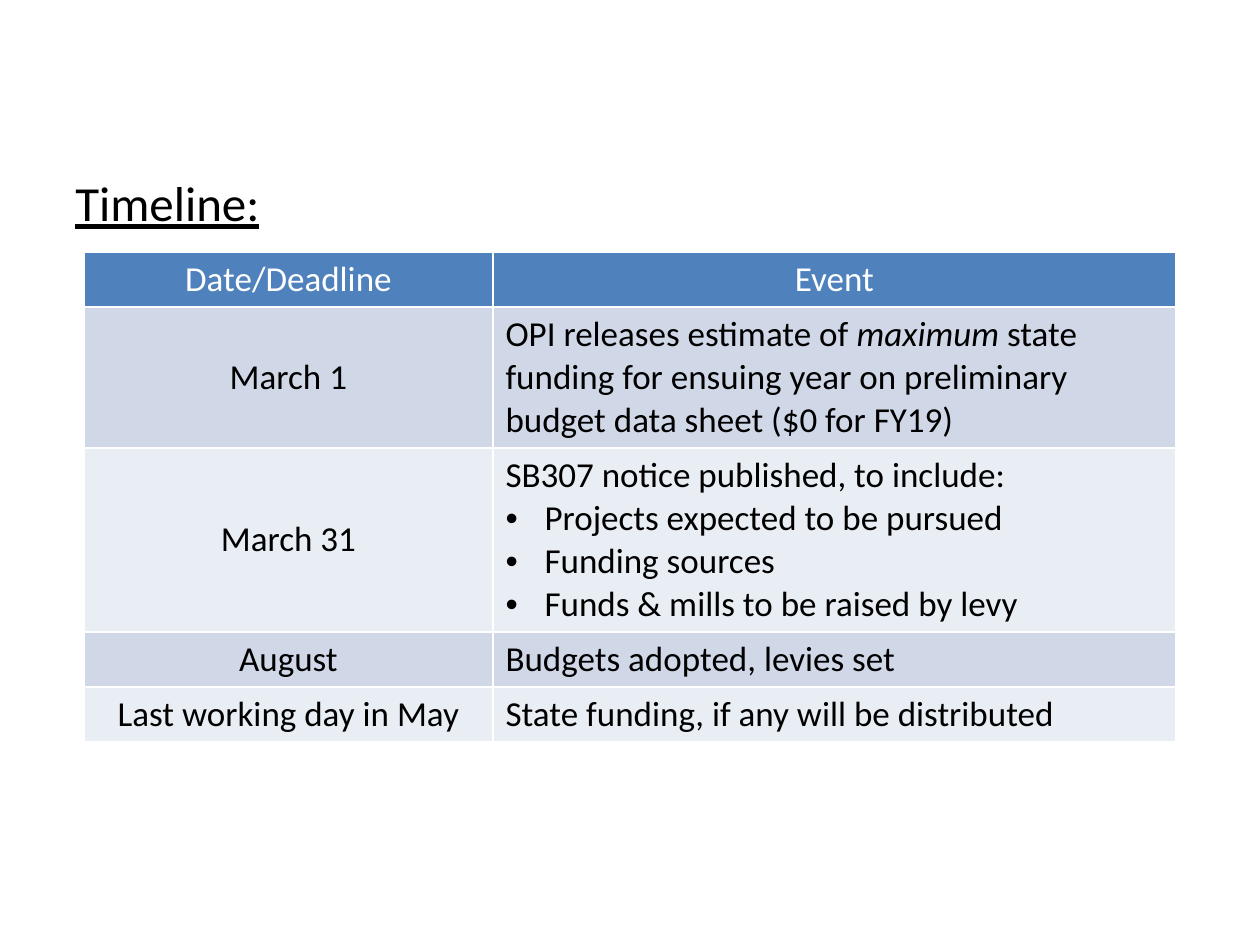
from dataclasses import dataclass

from lxml.etree import SubElement
from pptx import Presentation
from pptx.dml.color import RGBColor
from pptx.enum.text import MSO_ANCHOR, PP_ALIGN
from pptx.oxml.ns import qn
from pptx.util import Emu, Pt

PX = 914400 // 126


def px(length):
    return Emu(length * PX)


@dataclass(frozen=True)
class Theme:
    font: str = "Calibri"
    heading_size: int = 28
    table_size: int = 20
    text: str = "000000"
    white: str = "FFFFFF"
    header: str = "4F81BD"
    bands: tuple = ("D0D8E8", "E9EDF4")
    border_width: int = 1
    bullet_indent: int = 39


class SlideBuilder:
    def __init__(self, presentation, theme):
        self.theme = theme
        self.slide = presentation.slides.add_slide(presentation.slide_layouts[6])
        background = self.slide.background.fill
        background.solid()
        background.fore_color.rgb = RGBColor.from_string(theme.white)

    def run(self, paragraph, text, size, color, italic=False, underline=False):
        run = paragraph.add_run()
        run.text = text
        font = run.font
        font.name = self.theme.font
        font.size = Pt(size)
        font.bold = False
        font.italic = italic
        font.underline = underline
        font.color.rgb = RGBColor.from_string(color)

    def heading(self, text, left, top, width, height):
        frame = self.slide.shapes.add_textbox(
            px(left), px(top), px(width), px(height)).text_frame
        frame.word_wrap = True
        paragraph = frame.paragraphs[0]
        paragraph.line_spacing = 1.14
        self.run(paragraph, text, self.theme.heading_size, self.theme.text, underline=True)

    def bullet(self, paragraph):
        properties = paragraph._p.get_or_add_pPr()
        indent = px(self.theme.bullet_indent)
        properties.set("marL", str(indent))
        properties.set("indent", str(-indent))
        SubElement(properties, qn("a:buFont")).set("typeface", "Arial")
        SubElement(properties, qn("a:buChar")).set("char", "•")

    def borders(self, cell):
        properties = cell._tc.get_or_add_tcPr()
        for side in ("lnL", "lnR", "lnT", "lnB"):
            line = SubElement(properties, qn(f"a:{side}"))
            line.set("w", str(Pt(self.theme.border_width)))
            fill = SubElement(line, qn("a:solidFill"))
            SubElement(fill, qn("a:srgbClr")).set("val", self.theme.white)

    def cell(self, cell, paragraphs, fill, color, centered):
        self.borders(cell)
        cell.fill.solid()
        cell.fill.fore_color.rgb = RGBColor.from_string(fill)
        cell.vertical_anchor = MSO_ANCHOR.MIDDLE
        frame = cell.text_frame
        for index, (bulleted, runs) in enumerate(paragraphs):
            paragraph = frame.add_paragraph() if index else frame.paragraphs[0]
            paragraph.alignment = PP_ALIGN.CENTER if centered else PP_ALIGN.LEFT
            if bulleted:
                self.bullet(paragraph)
            for text, italic in runs:
                self.run(paragraph, text, self.theme.table_size, color, italic)

    def table(self, left, top, column_widths, row_heights, rows):
        table = self.slide.shapes.add_table(
            len(rows), len(column_widths), px(left), px(top),
            px(sum(column_widths)), px(sum(row_heights))).table
        for column, width in zip(table.columns, column_widths):
            column.width = px(width)
        for row, height in zip(table.rows, row_heights):
            row.height = px(height)
        for row_index, row in enumerate(rows):
            is_header = row_index == 0
            fill = self.theme.header if is_header else self.theme.bands[(row_index - 1) % 2]
            color = self.theme.white if is_header else self.theme.text
            for column_index, paragraphs in enumerate(row):
                self.cell(table.cell(row_index, column_index), paragraphs, fill, color,
                          centered=is_header or column_index == 0)


def line(text, bulleted=False):
    return bulleted, [(text, False)]


# Each cell is a list of paragraphs: (bulleted, [(text, italic), ...])
TIMELINE = [
    ([line("Date/Deadline")], [line("Event")]),
    ([line("March 1")], [(False, [
        ("OPI releases estimate of ", False),
        ("maximum ", True),
        ("state funding for ensuing year on preliminary budget data sheet ($0 for FY19)", False),
    ])]),
    ([line("March 31")], [
        line("SB307 notice published, to include:"),
        line("Projects expected to be pursued", bulleted=True),
        line("Funding sources", bulleted=True),
        line("Funds & mills to be raised by levy", bulleted=True),
    ]),
    ([line("August")], [line("Budgets adopted, levies set")]),
    ([line("Last working day in May")], [line("State funding, if any will be distributed")]),
]


def main():
    presentation = Presentation()
    presentation.slide_width = px(1260)
    presentation.slide_height = px(945)
    builder = SlideBuilder(presentation, Theme())

    # Heading
    builder.heading("Timeline:", 63, 158, 1134, 687)

    # Timeline table
    builder.table(84, 252, (409, 683), (55, 141, 184, 55, 55), TIMELINE)

    presentation.save("out.pptx")


if __name__ == "__main__":
    main()
